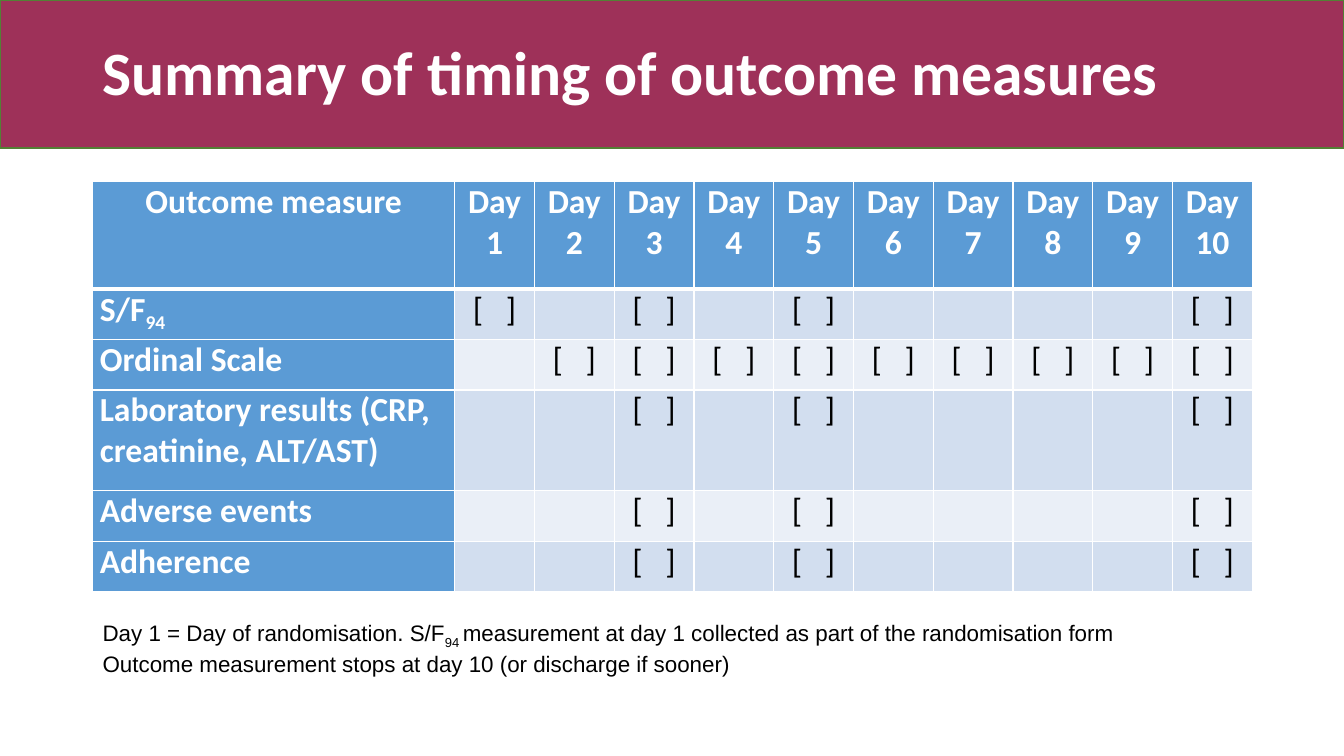
from lxml.etree import SubElement
from pptx import Presentation
from pptx.dml.color import RGBColor
from pptx.enum.shapes import MSO_SHAPE
from pptx.enum.text import MSO_ANCHOR, PP_ALIGN
from pptx.oxml.ns import qn
from pptx.util import Inches, Pt

COLORS = {
    "band": "9E3159", "edge": "538035", "white": "FFFFFF", "black": "000000",
    "head": "5B9BD5", "odd": "D2DEEF", "even": "EAEFF7",
}
TITLE = {"name": "Calibri", "size": Pt(44), "bold": True, "color": "white"}
LABEL = {"name": "Calibri", "size": Pt(24), "bold": True, "color": "white"}
MARK = {"name": "Calibri", "size": Pt(24), "bold": False, "color": "black"}
NOTE = {"name": "Arial", "size": Pt(16), "bold": False, "color": "black"}

# Each measure: label runs (text, baseline), row height, days measured
DAYS = range(1, 11)
ROWS = [
    ([("S/F", 0), ("94", -25)], 0.5, {1, 3, 5, 10}),
    ([("Ordinal Scale", 0)], 0.5, set(range(2, 11))),
    ([("Laboratory results (CRP, creatinine, ALT/AST)", 0)], 1, {3, 5, 10}),
    ([("Adverse events", 0)], 0.5, {3, 5, 10}),
    ([("Adherence", 0)], 0.5, {3, 5, 10}),
]
NOTES = [
    [("Day 1 = Day of randomisation. S/F", 0), ("94 ", -30),
     ("measurement at day 1 collected as part of the randomisation form", 0)],
    [("Outcome measurement stops at day 10 (or discharge if sooner)", 0)],
]


def tint(name):
    return RGBColor.from_string(COLORS[name])


def write(para, parts, style, align=PP_ALIGN.LEFT):
    para.alignment = align
    for text, shift in parts:
        run = para.add_run()
        run.text = text
        for key, value in style.items():
            if key == "color":
                run.font.color.rgb = tint(value)
            else:
                setattr(run.font, key, value)
        if shift:
            run.font._element.set("baseline", str(shift * 1000))


def add_text(slide, box, lines, style, space=1.0):
    frame = slide.shapes.add_textbox(*map(Inches, box)).text_frame
    frame.word_wrap = True
    frame.vertical_anchor = MSO_ANCHOR.MIDDLE
    for i, parts in enumerate(lines):
        para = frame.add_paragraph() if i else frame.paragraphs[0]
        para.line_spacing = space
        write(para, parts, style)


def add_header(slide, box, text):
    band = slide.shapes.add_shape(MSO_SHAPE.RECTANGLE, *map(Inches, box))
    band.shadow.inherit = False
    band.fill.solid()
    band.fill.fore_color.rgb = tint("band")
    band.line.color.rgb = tint("edge")
    band.line.width = Pt(1)
    left, top, width, height = box
    area = (left + 0.92, top + 0.02, width - 1.83, height - 0.02)
    add_text(slide, area, [[(text, 0)]], TITLE, 0.9)


def style_cell(cell, fill, top=1, base=1):
    # Borders come before the fill in the cell properties
    props = cell._tc.get_or_add_tcPr()
    for side, width in {"L": 1, "R": 1, "T": top, "B": base}.items():
        line = SubElement(props, qn(f"a:ln{side}"), w=str(Pt(width)))
        paint = SubElement(line, qn("a:solidFill"))
        SubElement(paint, qn("a:srgbClr"), val=COLORS["white"])
    cell.fill.solid()
    cell.fill.fore_color.rgb = tint(fill)
    pads = {"left": 0.07, "right": 0.07, "top": 0, "bottom": 0}
    for side, pad in pads.items():
        setattr(cell, f"margin_{side}", Inches(pad))


def add_grid(slide, box):
    size = len(ROWS) + 1, len(DAYS) + 1
    table = slide.shapes.add_table(*size, *map(Inches, box)).table
    first = 3.59
    step = (box[2] - first) / len(DAYS)
    for i, col in enumerate(table.columns):
        col.width = Inches(step if i else first)

    # Header row
    table.rows[0].height = Inches(1.07)
    heads = ["Outcome measure"] + [f"Day {day}" for day in DAYS]
    for c, text in enumerate(heads):
        cell = table.cell(0, c)
        style_cell(cell, "head", base=3)
        write(cell.text_frame.paragraphs[0], [(text, 0)], LABEL,
              PP_ALIGN.CENTER)

    # Measure rows
    for r, (label, height, days) in enumerate(ROWS, 1):
        table.rows[r].height = Inches(height)
        top = 3 if r == 1 else 1
        cell = table.cell(r, 0)
        style_cell(cell, "head", top)
        write(cell.text_frame.paragraphs[0], label, LABEL)
        for day in DAYS:
            cell = table.cell(r, day)
            style_cell(cell, "odd" if r % 2 else "even", top)
            if day in days:
                write(cell.text_frame.paragraphs[0], [("[   ]", 0)], MARK,
                      PP_ALIGN.CENTER)


def main():
    deck = Presentation()
    deck.slide_width, deck.slide_height = Inches(13.33), Inches(7.5)
    slide = deck.slides.add_slide(deck.slide_layouts[6])
    add_header(slide, (0, 0, 13.33, 1.47),
               "Summary of timing of outcome measures")
    add_grid(slide, (0.92, 1.8, 11.5, 4.06))
    add_text(slide, (0.92, 6.11, 11.5, 0.64), NOTES, NOTE)
    deck.save("out.pptx")


if __name__ == "__main__":
    main()
